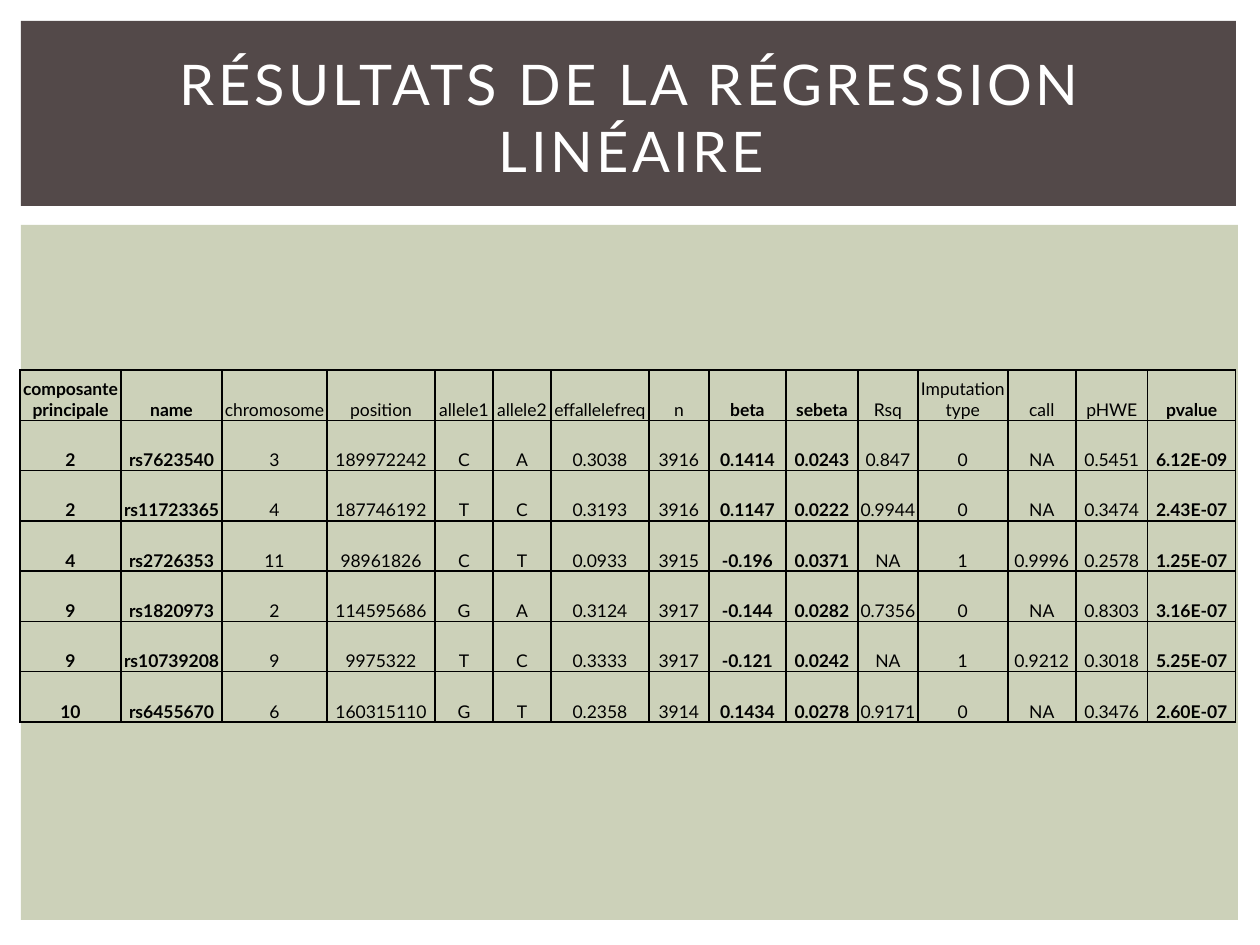
from lxml import etree
from pptx import Presentation
from pptx.dml.color import RGBColor
from pptx.enum.shapes import MSO_SHAPE
from pptx.enum.text import MSO_ANCHOR, MSO_AUTO_SIZE, PP_ALIGN
from pptx.oxml.ns import qn
from pptx.util import Emu, Pt

RECT = MSO_SHAPE.RECTANGLE
MIDDLE, BOTTOM = MSO_ANCHOR.MIDDLE, MSO_ANCHOR.BOTTOM
CENTER = PP_ALIGN.CENTER
FIXED = MSO_AUTO_SIZE.NONE

WHITE = RGBColor(0xFF, 0xFF, 0xFF)
BLACK = RGBColor(0, 0, 0)
BROWN = RGBColor(0x53, 0x49, 0x49)
SAGE = RGBColor(0xCC, 0xD1, 0xB9)
FONT = "Lato"

TITLE = "RÉSULTATS DE LA RÉGRESSION LINÉAIRE"
WIDTHS = [101, 101, 105, 108, 58, 58, 98, 60, 77, 72, 60, 90, 68, 72, 88]
BOLD = {"composante principale", "name", "beta", "sebeta", "pvalue"}
HEADS = ["composante principale", "name", "chromosome", "position", "allele1",
         "allele2", "effallelefreq", "n", "beta", "sebeta", "Rsq",
         "Imputation type", "call", "pHWE", "pvalue"]
DATA = """
2 rs7623540 3 189972242 C A 0.3038 3916 0.1414 0.0243 0.847 0 NA 0.5451 6.12E-09
2 rs11723365 4 187746192 T C 0.3193 3916 0.1147 0.0222 0.9944 0 NA 0.3474 2.43E-07
4 rs2726353 11 98961826 C T 0.0933 3915 -0.196 0.0371 NA 1 0.9996 0.2578 1.25E-07
9 rs1820973 2 114595686 G A 0.3124 3917 -0.144 0.0282 0.7356 0 NA 0.8303 3.16E-07
9 rs10739208 9 9975322 T C 0.3333 3917 -0.121 0.0242 NA 1 0.9212 0.3018 5.25E-07
10 rs6455670 6 160315110 G T 0.2358 3914 0.1434 0.0278 0.9171 0 NA 0.3476 2.60E-07
"""


def px(n):
    """Turn pixels into EMU."""
    return Emu(round(n * 914400 / 126))


def write(frame, text, size=10, color=BLACK, bold=False, space=0):
    """Put one centred, formatted paragraph in a text frame."""
    par = frame.paragraphs[0]
    par.alignment = CENTER
    run = par.add_run()
    run.text = text
    font = run.font
    font.name, font.size, font.bold = FONT, Pt(size), bold
    font.color.rgb = color
    if space:
        run._r.get_or_add_rPr().set("spc", str(space * 100))


def panel(slide, x, y, w, h, color):
    """Draw a plain filled rectangle."""
    box = slide.shapes.add_shape(RECT, px(x), px(y), px(w), px(h))
    box.shadow.inherit = False
    box.fill.solid()
    box.fill.fore_color.rgb = color
    box.line.fill.background()


def banner(slide, x, y, w, h):
    """Draw the title band with the title on top of it."""
    panel(slide, x, y, w, h, BROWN)
    title = slide.shapes.title
    title.left, title.top = px(x + 42), px(y + 17)
    title.width, title.height = px(w - 78), px(h - 28)
    frame = title.text_frame
    frame.word_wrap, frame.auto_size = True, FIXED
    frame.vertical_anchor = MIDDLE
    write(frame, TITLE, size=32, color=WHITE, space=2)
    slide.shapes._spTree.append(title._element)


def border(cell):
    """Give a cell thin black lines on all four sides."""
    props = cell._tc.get_or_add_tcPr()
    for spot, side in enumerate(("lnL", "lnR", "lnT", "lnB")):
        line = etree.Element(qn(f"a:{side}"), w=str(Pt(1)))
        fill = etree.SubElement(line, qn("a:solidFill"))
        etree.SubElement(fill, qn("a:srgbClr"), val=str(BLACK))
        props.insert(spot, line)


def results(slide, x, y, w, h):
    """Build the table of regression results."""
    rows = [HEADS] + [row.split() for row in DATA.strip().splitlines()]
    table = slide.shapes.add_table(
        len(rows), len(HEADS), px(x), px(y), px(w), px(h)).table
    table.first_row = table.horz_banding = False
    for col, wide in zip(table.columns, WIDTHS):
        col.width = px(wide)
    for r, row in enumerate(rows):
        for c, text in enumerate(row):
            cell = table.cell(r, c)
            cell.fill.background()
            border(cell)
            cell.margin_left = cell.margin_right = cell.margin_top = px(1)
            cell.margin_bottom = 0
            cell.vertical_anchor = BOTTOM
            write(cell.text_frame, text, bold=HEADS[c] in BOLD)


def main():
    """Build and save the slide."""
    deck = Presentation()
    deck.slide_width, deck.slide_height = px(1260), px(945)
    slide = deck.slides.add_slide(deck.slide_layouts[5])
    panel(slide, 21, 225, 1217, 695, SAGE)
    banner(slide, 21, 21, 1215, 185)
    results(slide, 20, 370, sum(WIDTHS), 352)
    deck.save("out.pptx")


if __name__ == "__main__":
    main()
